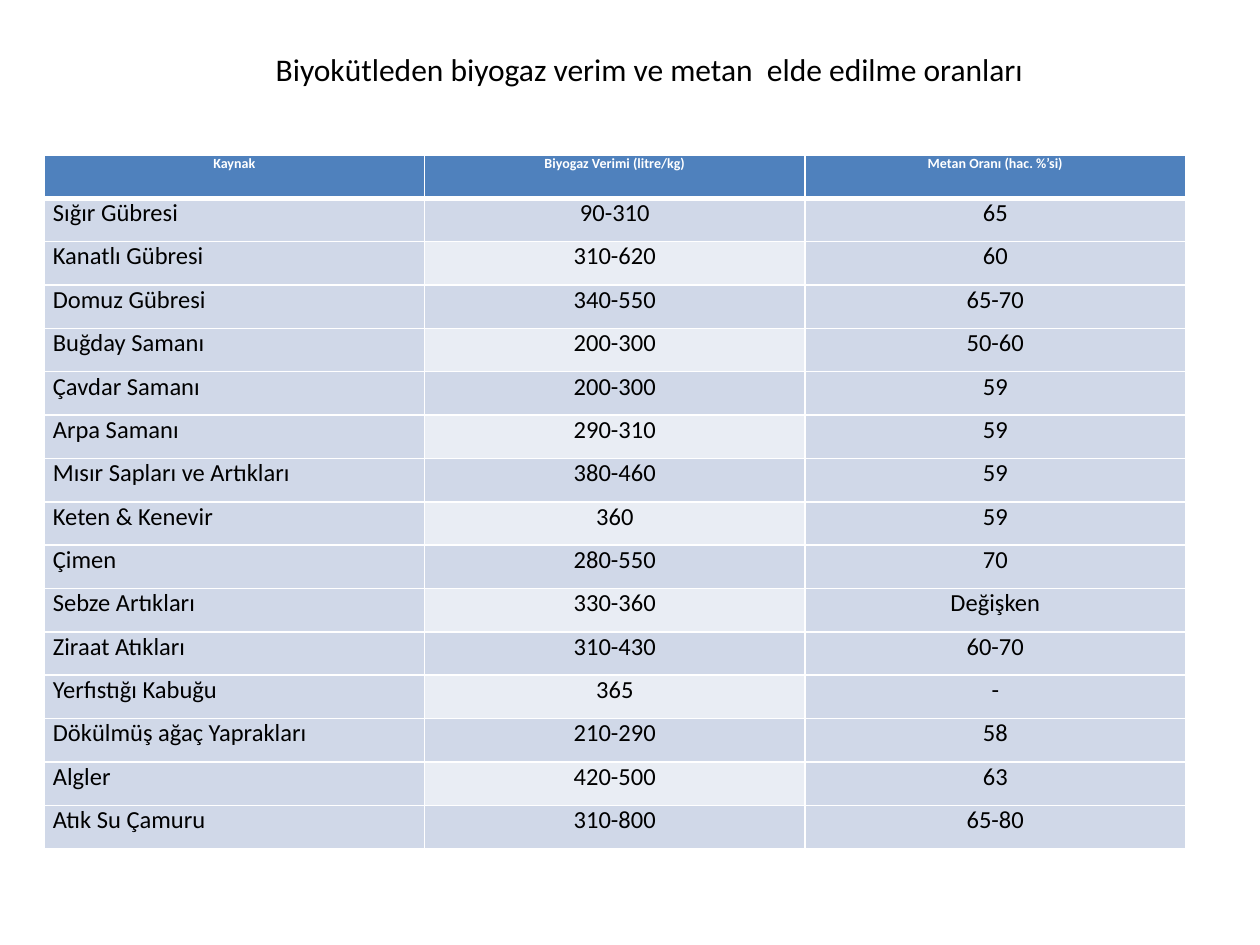
from dataclasses import dataclass

from lxml.etree import SubElement
from pptx import Presentation
from pptx.dml.color import RGBColor
from pptx.enum.text import MSO_AUTO_SIZE as AutoSize, PP_ALIGN as Align
from pptx.oxml.ns import qn
from pptx.util import Inches, Pt

COLORS = {
    "header": "4F81BD",
    "band": "D0D8E8",
    "light_band": "E9EDF4",
    "white": "FFFFFF",
    "black": "000000",
}
FONT = "Calibri"
TABLE_WIDTH, TABLE_HEIGHT = 9.06, 5.51
HEADINGS = ("Kaynak", "Biyogaz Verimi (litre/kg)", "Metan Oranı (hac. %’si)")


@dataclass(frozen=True)
class Biomass:
    source: str
    biogas_yield: str
    methane_share: str


BIOMASSES = [
    Biomass("Sığır Gübresi", "90-310", "65"),
    Biomass("Kanatlı Gübresi", "310-620", "60"),
    Biomass("Domuz Gübresi", "340-550", "65-70"),
    Biomass("Buğday Samanı", "200-300", "50-60"),
    Biomass("Çavdar Samanı", "200-300", "59"),
    Biomass("Arpa Samanı", "290-310", "59"),
    Biomass("Mısır Sapları ve Artıkları", "380-460", "59"),
    Biomass("Keten & Kenevir", "360", "59"),
    Biomass("Çimen", "280-550", "70"),
    Biomass("Sebze Artıkları", "330-360", "Değişken"),
    Biomass("Ziraat Atıkları", "310-430", "60-70"),
    Biomass("Yerfıstığı Kabuğu", "365", "-"),
    Biomass("Dökülmüş ağaç Yaprakları", "210-290", "58"),
    Biomass("Algler", "420-500", "63"),
    Biomass("Atık Su Çamuru", "310-800", "65-80"),
]


def write_text(frame, text: str, *, size: float, color: str = "black",
               bold: bool = False, align: Align = Align.LEFT) -> None:
    paragraph = frame.paragraphs[0]
    paragraph.alignment = align
    run = paragraph.add_run()
    run.text = text
    run.font.name = FONT
    run.font.size = Pt(size)
    run.font.bold = bold
    run.font.color.rgb = RGBColor.from_string(COLORS[color])


def add_borders(cell, *, top: float = 1, bottom: float = 1) -> None:
    properties = cell._tc.get_or_add_tcPr()
    for side, width in (("L", 1), ("R", 1), ("T", top), ("B", bottom)):
        line = SubElement(properties, qn(f"a:ln{side}"), w=str(Pt(width)))
        solid = SubElement(line, qn("a:solidFill"))
        SubElement(solid, qn("a:srgbClr"), val=COLORS["white"])


def style_cell(cell, fill: str, *, top: float = 1, bottom: float = 1) -> None:
    cell.margin_left = cell.margin_right = Inches(0.07)
    cell.margin_top = cell.margin_bottom = 0
    add_borders(cell, top=top, bottom=bottom)
    cell.fill.solid()
    cell.fill.fore_color.rgb = RGBColor.from_string(COLORS[fill])


def add_title(slide, text: str) -> None:
    title = slide.shapes.add_textbox(Inches(2.09), Inches(0.35), Inches(7.24), Inches(0.4))
    title.text_frame.word_wrap = True
    title.text_frame.auto_size = AutoSize.SHAPE_TO_FIT_TEXT
    write_text(title.text_frame, text, size=18)


def add_yield_table(slide, biomasses: list[Biomass]) -> None:
    row_count = len(biomasses) + 1
    table = slide.shapes.add_table(
        row_count, len(HEADINGS), Inches(0.35), Inches(1.23),
        Inches(TABLE_WIDTH), Inches(TABLE_HEIGHT)).table
    for column in table.columns:
        column.width = Inches(TABLE_WIDTH / len(HEADINGS))
    for row in table.rows:
        row.height = Inches(TABLE_HEIGHT / row_count)

    for column_index, heading in enumerate(HEADINGS):
        cell = table.cell(0, column_index)
        style_cell(cell, "header", bottom=3)
        write_text(cell.text_frame, heading, size=8, color="white", bold=True,
                   align=Align.CENTER)

    for row_index, biomass in enumerate(biomasses, start=1):
        values = (biomass.source, biomass.biogas_yield, biomass.methane_share)
        for column_index, value in enumerate(values):
            cell = table.cell(row_index, column_index)
            is_light = column_index == 1 and row_index % 2 == 0
            style_cell(cell, "light_band" if is_light else "band",
                       top=3 if row_index == 1 else 1)
            write_text(cell.text_frame, value, size=14,
                       align=Align.CENTER if column_index else Align.LEFT)


def main() -> None:
    presentation = Presentation()
    presentation.slide_width = Inches(10)
    presentation.slide_height = Inches(7.5)
    slide = presentation.slides.add_slide(presentation.slide_layouts[6])
    add_yield_table(slide, BIOMASSES)
    add_title(slide, "Biyokütleden biyogaz verim ve metan  elde edilme oranları")
    presentation.save("out.pptx")


if __name__ == "__main__":
    main()
